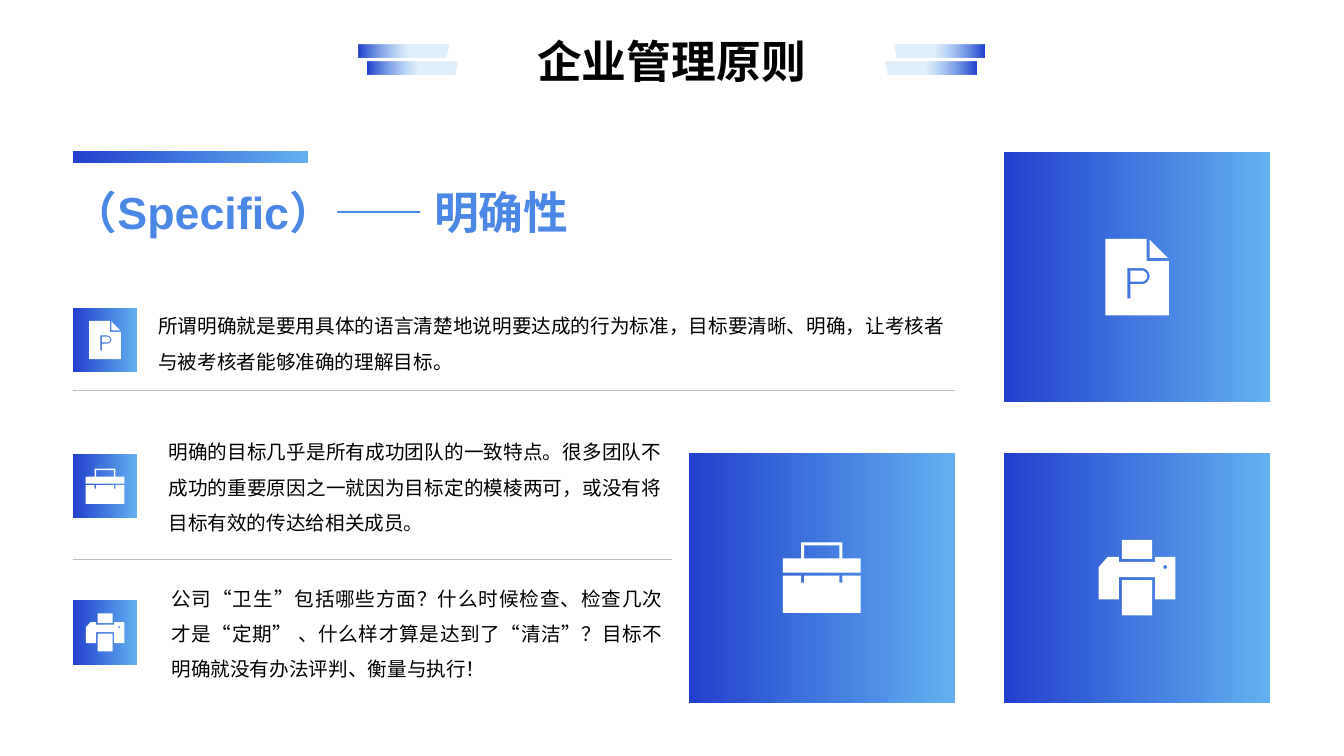
import math
from dataclasses import dataclass

from lxml import etree
from pptx import Presentation
from pptx.dml.color import RGBColor
from pptx.enum import shapes, text
from pptx.oxml import ns
from pptx.util import Pt


@dataclass(frozen=True)
class Theme:
    dark: RGBColor = RGBColor.from_string("2140CC")
    light: RGBColor = RGBColor.from_string("63B0F1")
    accent: RGBColor = RGBColor.from_string("4B88E5")
    ink: RGBColor = RGBColor.from_string("000000")
    paper: RGBColor = RGBColor.from_string("FFFFFF")
    rule: RGBColor = RGBColor.from_string("BFBFBF")
    font: str = "Arial"
    title_size: int = 32
    body_size: int = 14


THEME = Theme()


def rectangle(left, top, right, bottom):
    return [(left, top), (right, top), (right, bottom), (left, bottom)]


def arc(center_x, center_y, radius, start, end, steps=16):
    angles = [math.radians(start + (end - start) * i / steps) for i in range(steps + 1)]
    return [(center_x + radius * math.cos(a), center_y + radius * math.sin(a)) for a in angles]


ICON_UNIT = 0.72
PRINTER = (76, 75, [
    rectangle(23, 40, 53, 75),
    [(20, 17), (20, 22), (56, 22), (56, 17), (76, 17), (76, 59), (56, 59),
     (56, 37), (20, 37), (20, 59), (0, 59), (0, 27), (9, 17)],
    arc(66, 27, 2, 0, 360),
    rectangle(23, 0, 53, 19),
])
BRIEFCASE = (77, 70, [
    [(18, 33), (18, 40), (21, 40), (21, 33), (56, 33), (56, 40), (59, 40),
     (59, 33), (77, 33), (77, 70), (0, 70), (0, 33)],
    [(59, 0), (59, 16), (77, 16), (77, 30), (0, 30), (0, 16), (18, 16), (18, 0)],
    rectangle(21, 3, 56, 16),
])
PAGE = (63, 76, [
    [(41, 0), (41, 22), (63, 22), (63, 76), (0, 76), (0, 0)],
    [(22, 59), (22, 29), *arc(36, 37, 8, -90, 90), (25, 45), (25, 59)],
    [(25, 31.5), *arc(36, 37, 5.5, -90, 90), (25, 42.5)],
    [(62, 19), (44, 19), (44, 1)],
])


def add_outline(slide, left, top, contours, scale=1):
    placed = [[(Pt(left + x * scale), Pt(top + y * scale)) for x, y in contour]
              for contour in contours]
    builder = slide.shapes.build_freeform(*placed[0][0], scale=1.0)
    for index, contour in enumerate(placed):
        if index:
            builder.move_to(*contour[0])
        builder.add_line_segments(contour[1:], close=True)
    shape = builder.convert_to_shape()
    shape.shadow.inherit = False
    shape.line.fill.background()
    return shape


def fill_gradient(shape, stops):
    shape.fill.gradient()
    shape.fill.gradient_angle = 0
    for stop, (position, color) in zip(shape.fill.gradient_stops, stops):
        stop.position = position
        stop.color.rgb = color


def add_block(slide, box):
    shape = slide.shapes.add_shape(shapes.MSO_SHAPE.RECTANGLE, *map(Pt, box))
    shape.shadow.inherit = False
    shape.line.fill.background()
    fill_gradient(shape, [(0, THEME.dark), (1, THEME.light)])


def add_text(slide, box, words, size, color, bold=False, spacing=1.0,
             align=text.PP_ALIGN.LEFT, anchor=text.MSO_ANCHOR.TOP):
    frame = slide.shapes.add_textbox(*map(Pt, box)).text_frame
    frame.text = words
    frame.word_wrap = True
    frame.auto_size = text.MSO_AUTO_SIZE.SHAPE_TO_FIT_TEXT
    frame.vertical_anchor = anchor
    paragraph = frame.paragraphs[0]
    paragraph.alignment = align
    paragraph.line_spacing = spacing
    font = paragraph.runs[0].font
    font.name, font.size, font.bold = THEME.font, Pt(size), bold
    font.color.rgb = color


def add_rule(slide, left, right, y):
    line = slide.shapes.add_connector(
        shapes.MSO_CONNECTOR.STRAIGHT, Pt(left), Pt(y), Pt(right), Pt(y))
    line.line.color.rgb = THEME.rule
    line.line.width = Pt(0.5)
    etree.SubElement(line.element.spPr, ns.qn("a:effectLst"))


def add_tile(slide, box, icon, scale=1):
    left, top, width, height = box
    icon_width, icon_height, contours = icon
    unit = ICON_UNIT * scale
    add_block(slide, box)
    shape = add_outline(slide, left + (width - icon_width * unit) / 2,
                        top + (height - icon_height * unit) / 2, contours, unit)
    shape.fill.solid()
    shape.fill.fore_color.rgb = THEME.paper


def add_ribbon(slide, left, top, mirrored):
    width, height, slant = 64.5, 9, 2
    contour = [(0, 0), (width, 0), (width - slant, height), (0, height)]
    stops = [(0, THEME.dark), (0.56, THEME.light)]
    if mirrored:
        contour = [(width - x, y) for x, y in contour]
        stops = [(1 - position, color) for position, color in reversed(stops)]
    shape = add_outline(slide, left, top, [contour])
    fill_gradient(shape, stops)
    for color in shape.element.spPr.iter(ns.qn("a:srgbClr")):
        if color.get("val") == str(THEME.light):
            etree.SubElement(color, ns.qn("a:alpha"), val="20000")


def add_header(slide, box):
    left, top, width, height = box
    ribbon_width, indent = 64.5, 6
    for row in range(2):
        y = top + 12 + 12.2 * row
        add_ribbon(slide, left + indent * row, y, False)
        add_ribbon(slide, left + width - ribbon_width - indent * row, y, True)
    add_text(slide, (left + 75.6, top, width - 151.2, height), "企业管理原则",
             THEME.title_size, THEME.ink, bold=True, align=text.PP_ALIGN.CENTER)


def add_heading(slide, box):
    left, top, width, height = box
    add_text(slide, (left - 7.2, top + 13, width, height - 13), "（Specific）—— 明确性",
             THEME.title_size, THEME.accent, bold=True, spacing=1.2,
             anchor=text.MSO_ANCHOR.BOTTOM)
    add_block(slide, (left, top, 168, 8.6))


def add_points(slide, box):
    left, top, width, height = box
    icon_size = 46.2
    step = (height - icon_size) / 2
    points = [
        (PAGE, 54, -7.2, 576, "所谓明确就是要用具体的语言清楚地说明要达成的行为标准，"
         "目标要清晰、明确，让考核者与被考核者能够准确的理解目标。"),
        (BRIEFCASE, 61.2, -21.6, 366.5, "明确的目标几乎是所有成功团队的一致特点。"
         "很多团队不成功的重要原因之一就因为目标定的模棱两可，或没有将目标有效的传达给相关成员。"),
        (PRINTER, 63.4, -21.6, 365, "公司“卫生”包括哪些方面？什么时候检查、检查几次才是“定期” 、"
         "什么样才算是达到了“清洁”？目标不明确就没有办法评判、衡量与执行！"),
    ]
    for row, (icon, text_left, text_top, text_width, words) in enumerate(points):
        y = top + step * row
        text_height = 57.6 if row == 0 else 82.8
        add_tile(slide, (left, y, icon_size, icon_size), icon, 0.5)
        add_text(slide, (left + text_left, y + text_top, text_width, text_height), words,
                 THEME.body_size, THEME.ink, spacing=1.5, align=text.PP_ALIGN.JUSTIFY)
    add_rule(slide, left, left + width, top + 59)
    add_rule(slide, left, left + 428, top + 180)


def add_tiles(slide, box):
    left, top, width, height = box
    tile_width, tile_height = 190, 178.6
    right, bottom = left + width - tile_width, top + height - tile_height
    for x, y, icon in [(left, bottom, BRIEFCASE), (right, top, PAGE), (right, bottom, PRINTER)]:
        add_tile(slide, (x, y, tile_width, tile_height), icon)


def main():
    presentation = Presentation()
    presentation.slide_width, presentation.slide_height = Pt(960), Pt(540)
    slide = presentation.slides.add_slide(presentation.slide_layouts[6])
    add_header(slide, (256.2, 20.2, 447.2, 45.4))
    add_heading(slide, (52, 108, 653, 66.2))
    add_tiles(slide, (492, 108.7, 415.2, 393.2))
    add_points(slide, (52, 219.8, 630, 255))
    presentation.save("out.pptx")


if __name__ == "__main__":
    main()
